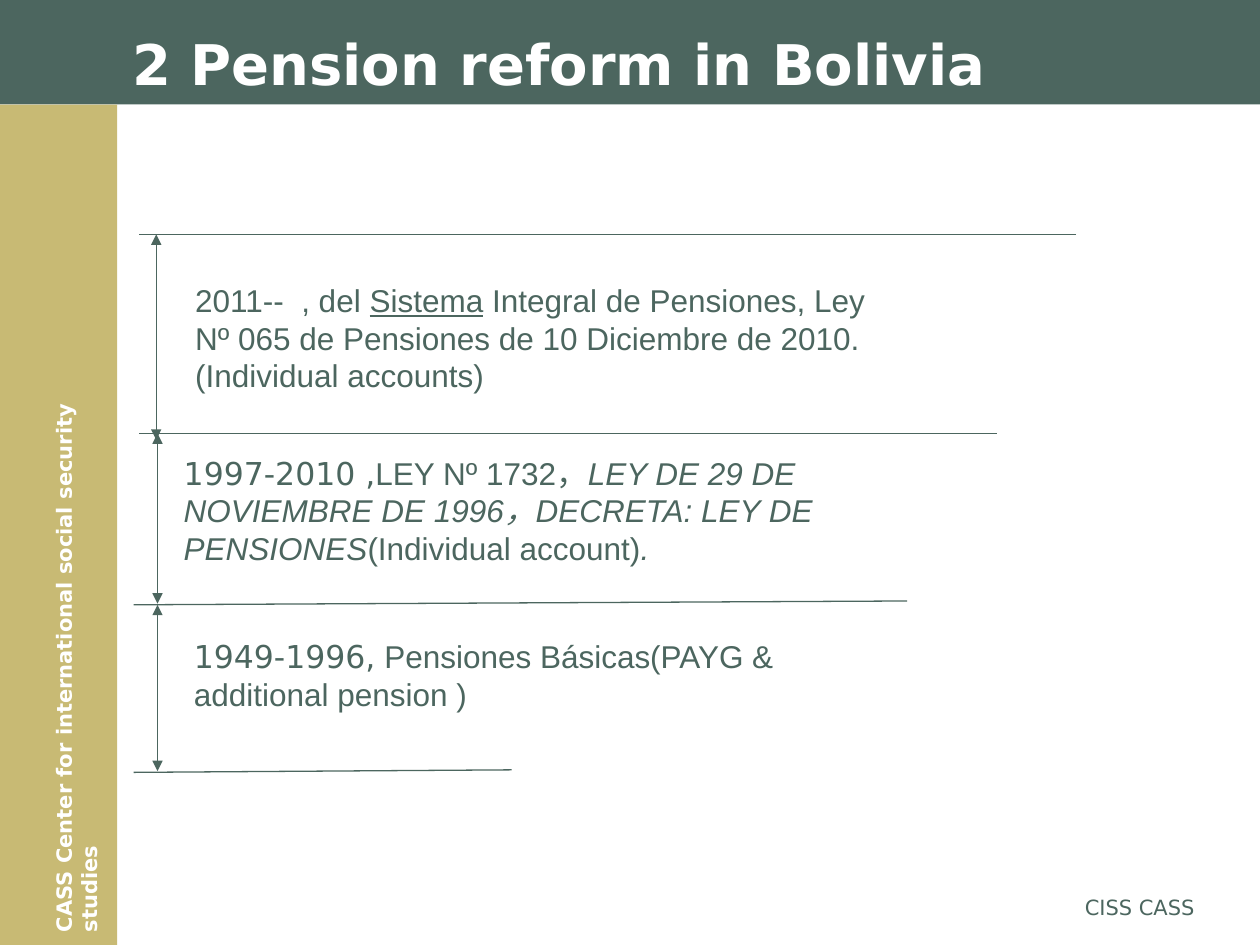
from lxml import etree
from pptx import Presentation
from pptx.dml.color import RGBColor
from pptx.enum.shapes import MSO_CONNECTOR, MSO_SHAPE
from pptx.enum.text import MSO_ANCHOR, MSO_AUTO_SIZE, PP_ALIGN
from pptx.oxml.ns import qn
from pptx.util import Inches, Pt

GREEN = RGBColor(0x4C, 0x66, 0x5F)
SAND = RGBColor(0xC8, 0xBA, 0x74)
WHITE = RGBColor(0xFF, 0xFF, 0xFF)
HEADING_FONT = "DejaVu Sans"
BODY_FONT = "Arial"
RECTANGLE = MSO_SHAPE.RECTANGLE
STRAIGHT = MSO_CONNECTOR.STRAIGHT
LEFT, RIGHT = PP_ALIGN.LEFT, PP_ALIGN.RIGHT
TOP, MIDDLE = MSO_ANCHOR.TOP, MSO_ANCHOR.MIDDLE
FIXED, GROW = MSO_AUTO_SIZE.NONE, MSO_AUTO_SIZE.SHAPE_TO_FIT_TEXT

DIVIDERS = [
    (8.54, 1.86, 1.10, 1.86),
    (7.91, 3.44, 1.10, 3.44),
    (7.20, 4.77, 1.06, 4.80),
    (4.06, 6.11, 1.06, 6.13),
]
SPANS = [(1.24, 1.86, 3.49), (1.25, 3.44, 4.79), (1.25, 4.80, 6.12)]
PERIODS = [
    ((1.45, 2.18, 5.52, 1.01), [
        ("2011--  , del ", {}),
        ("Sistema", {"underline": True}),
        (" Integral de Pensiones, Ley Nº 065 de Pensiones de 10 Diciembre "
         "de 2010.(Individual accounts)", {}),
    ]),
    ((1.36, 3.55, 5.61, 1.01), [
        ("1997-2010 ,", {"name": HEADING_FONT}),
        ("LEY Nº 1732，", {}),
        ("LEY DE 29 DE NOVIEMBRE DE 1996，DECRETA: LEY DE PENSIONES", {"italic": True}),
        ("(Individual account)", {}),
        (".", {"italic": True}),
    ]),
    ((1.44, 5.01, 5.69, 0.71), [
        ("1949-1996,", {"name": HEADING_FONT}),
        (" Pensiones Básicas(PAYG & additional pension )", {}),
    ]),
]


def add_band(slide, box, color):
    band = slide.shapes.add_shape(RECTANGLE, *map(Inches, box))
    band.shadow.inherit = False
    band.fill.solid()
    band.fill.fore_color.rgb = color
    band.line.fill.background()


def add_text(slide, box, runs, *, size=18, name=HEADING_FONT, color=GREEN, bold=False,
             align=LEFT, anchor=TOP, fit=FIXED, rotation=0):
    label = slide.shapes.add_textbox(*map(Inches, box))
    label.rotation = rotation
    frame = label.text_frame
    frame.word_wrap = True
    frame.auto_size = fit
    frame.vertical_anchor = anchor
    paragraph = frame.paragraphs[0]
    paragraph.alignment = align
    for text, changes in runs:
        run = paragraph.add_run()
        run.text = text
        font = run.font
        font.size = Pt(size)
        font.color.rgb = color
        font.bold = bold
        font.name = changes.get("name", name)
        font.italic = changes.get("italic", False)
        font.underline = changes.get("underline", False)


def add_line(slide, ends, arrows=False):
    connector = slide.shapes.add_connector(STRAIGHT, *map(Inches, ends))
    connector.line.color.rgb = GREEN
    connector.line.width = Pt(0.75)
    properties = connector.line._get_or_add_ln()
    if arrows:
        for end in ("a:headEnd", "a:tailEnd"):
            etree.SubElement(properties, qn(end), type="triangle")
    etree.SubElement(properties.getparent(), qn("a:effectLst"))


def main():
    presentation = Presentation()
    presentation.slide_width = Inches(10)
    presentation.slide_height = Inches(7.5)
    slide = presentation.slides.add_slide(presentation.slide_layouts[6])

    add_band(slide, (0, 0, 10, 0.83), GREEN)
    add_band(slide, (0, 0.83, 0.93, 6.67), SAND)
    add_text(slide, (-2.04, 4.8, 5.09, 0.3),
             [("CASS Center for international social security studies", {})],
             size=12, color=WHITE, bold=True, fit=GROW, rotation=270)
    add_text(slide, (6.83, 7.05, 2.75, 0.35), [("CISS CASS", {})], size=12, align=RIGHT)
    add_text(slide, (0.95, 0.19, 8.08, 0.62), [("2 Pension reform in Bolivia", {})],
             size=32, color=WHITE, bold=True, anchor=MIDDLE)

    for ends in DIVIDERS:
        add_line(slide, ends)
    for x, start, end in SPANS:
        add_line(slide, (x, start, x, end), arrows=True)
    for box, runs in PERIODS:
        add_text(slide, box, runs, name=BODY_FONT, fit=GROW)

    presentation.save("out.pptx")


if __name__ == "__main__":
    main()
